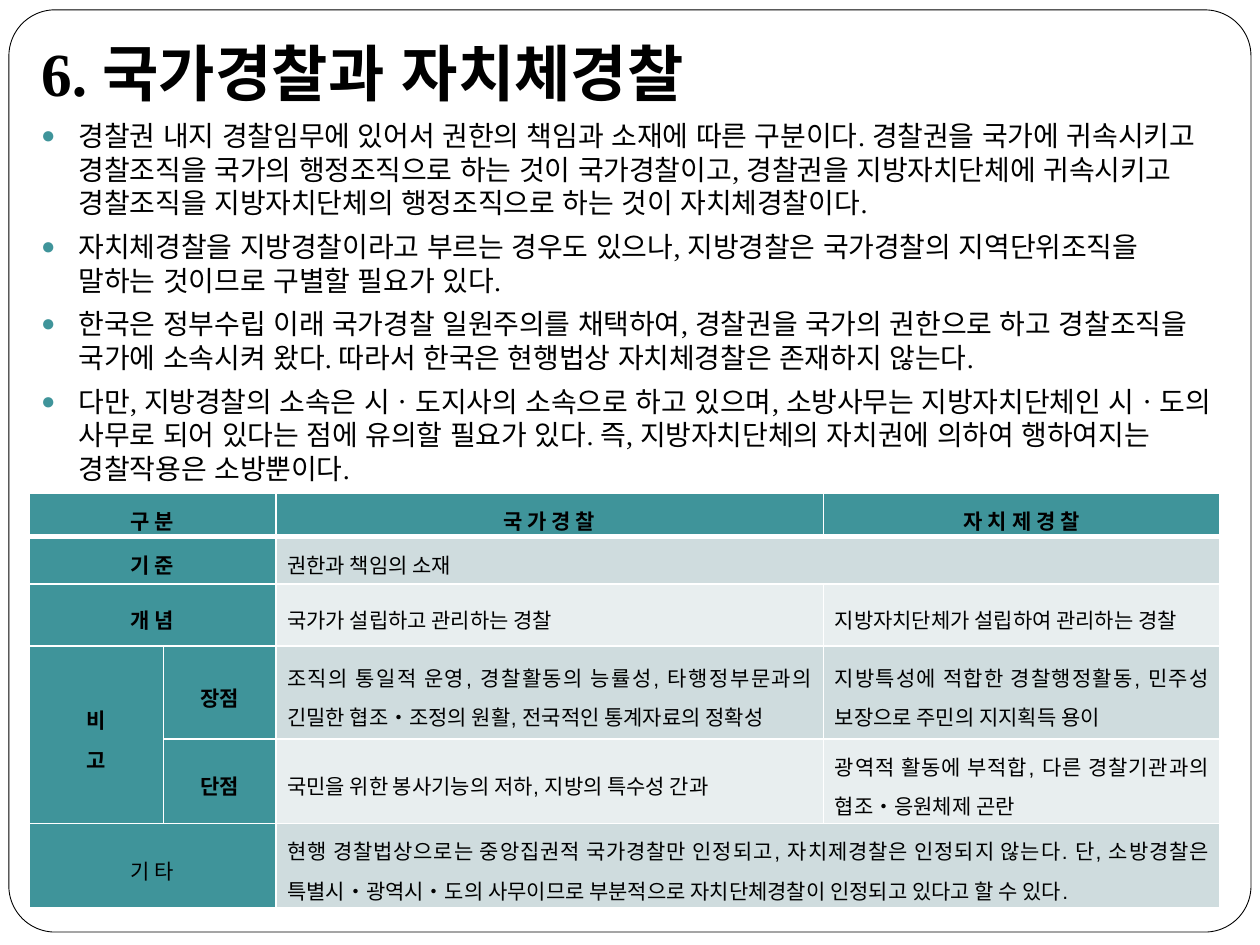
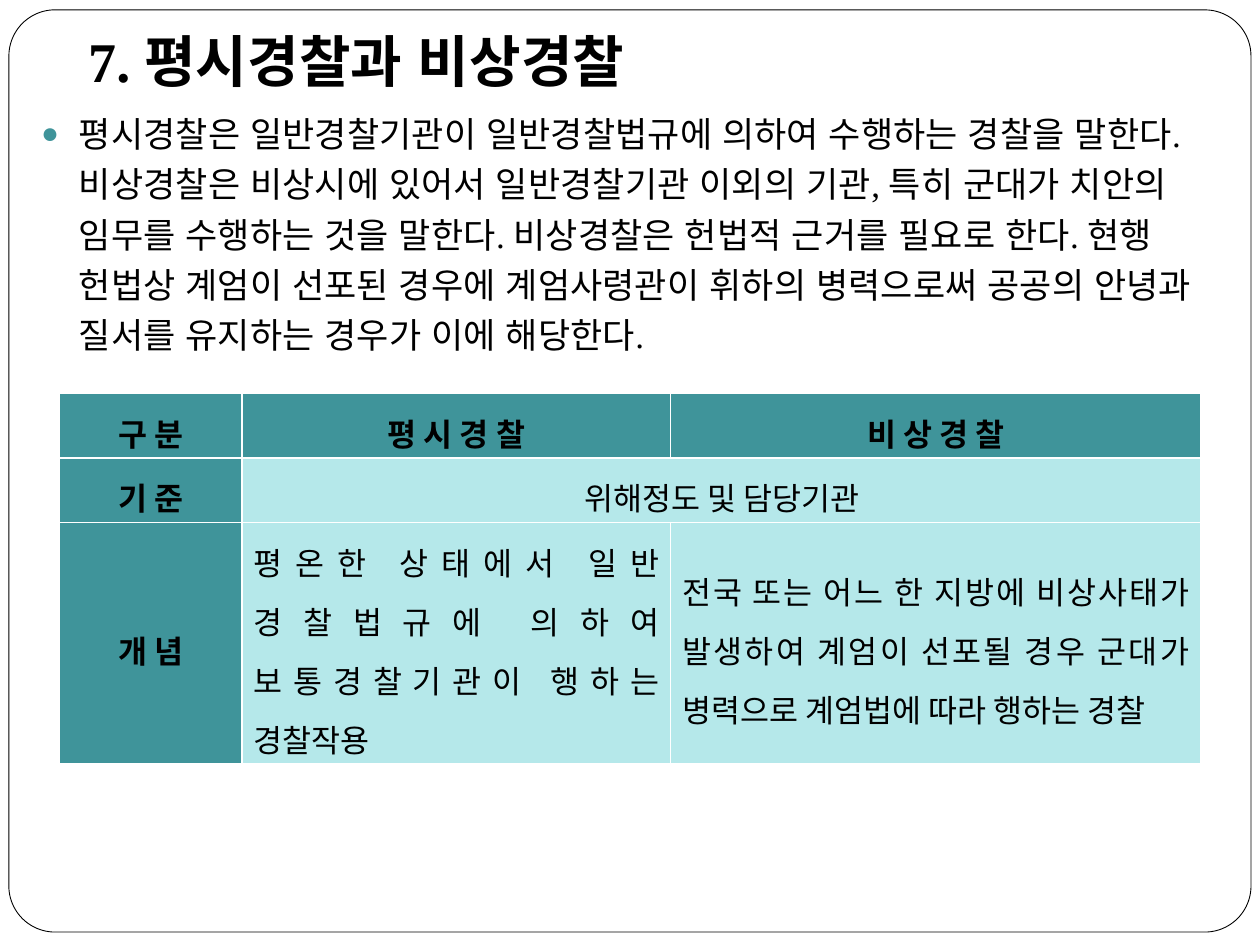
from lxml import etree
from pptx import Presentation
from pptx.dml.color import RGBColor
from pptx.enum.shapes import MSO_SHAPE
from pptx.enum.text import MSO_ANCHOR, PP_ALIGN
from pptx.oxml.ns import qn
from pptx.util import Cm, Pt

ROUNDED = MSO_SHAPE.ROUNDED_RECTANGLE
MIDDLE = MSO_ANCHOR.MIDDLE
CENTER, JUSTIFY = PP_ALIGN.CENTER, PP_ALIGN.JUSTIFY

BLACK, WHITE, TEAL = "000000", "FFFFFF", "3F949A"
GREY_BANDS = ["CFDCDE", "E8EEEF"]
AQUA_BANDS = ["B5E8EA"]
SERIF, SANS = "Times New Roman", "Arial"
HANGING = Cm(0.76)
CELL_INSET, CELL_INDENT = Cm(0.05), Cm(0.18)

# In the grids, "<" continues the cell to the left and "^" the cell above.
STATE_LOCAL_POINTS = [
    "경찰권 내지 경찰임무에 있어서 권한의 책임과 소재에 따른 구분이다. 경찰권을 국가에 귀속시키고 "
    "경찰조직을 국가의 행정조직으로 하는 것이 국가경찰이고, 경찰권을 지방자치단체에 귀속시키고 "
    "경찰조직을 지방자치단체의 행정조직으로 하는 것이 자치체경찰이다.",
    "자치체경찰을 지방경찰이라고 부르는 경우도 있으나, 지방경찰은 국가경찰의 지역단위조직을 "
    "말하는 것이므로 구별할 필요가 있다.",
    "한국은 정부수립 이래 국가경찰 일원주의를 채택하여, 경찰권을 국가의 권한으로 하고 경찰조직을 "
    "국가에 소속시켜 왔다. 따라서 한국은 현행법상 자치체경찰은 존재하지 않는다.",
    "다만, 지방경찰의 소속은 시ㆍ도지사의 소속으로 하고 있으며, 소방사무는 지방자치단체인 "
    "시ㆍ도의 사무로 되어 있다는 점에 유의할 필요가 있다. 즉, 지방자치단체의 자치권에 의하여 "
    "행하여지는 경찰작용은 소방뿐이다.",
]
STATE_LOCAL_GRID = [
    ["구 분", "<", "국 가 경 찰", "자 치 제 경 찰"],
    ["기 준", "<", "권한과 책임의 소재", "<"],
    ["개 념", "<", "국가가 설립하고 관리하는 경찰", "지방자치단체가 설립하여 관리하는 경찰"],
    ["비\n고", "장점",
     "조직의 통일적 운영, 경찰활동의 능률성, 타행정부문과의 긴밀한 협조‧조정의 원활, 전국적인 통계자료의 정확성",
     "지방특성에 적합한 경찰행정활동, 민주성 보장으로 주민의 지지획득 용이"],
    ["^", "단점", "국민을 위한 봉사기능의 저하, 지방의 특수성 간과",
     "광역적 활동에 부적합, 다른 경찰기관과의 협조‧응원체제 곤란"],
    ["기 타", "<",
     "현행 경찰법상으로는 중앙집권적 국가경찰만 인정되고, 자치제경찰은 인정되지 않는다. 단, 소방경찰은 "
     "특별시‧광역시‧도의 사무이므로 부분적으로 자치단체경찰이 인정되고 있다고 할 수 있다.", "<"],
]
PEACE_EMERGENCY_POINTS = [
    "평시경찰은 일반경찰기관이 일반경찰법규에 의하여 수행하는 경찰을 말한다. 비상경찰은 비상시에 "
    "있어서 일반경찰기관 이외의 기관, 특히 군대가 치안의 임무를 수행하는 것을 말한다. 비상경찰은 "
    "헌법적 근거를 필요로 한다. 현행 헌법상 계엄이 선포된 경우에 계엄사령관이 휘하의 병력으로써 "
    "공공의 안녕과 질서를 유지하는 경우가 이에 해당한다.",
]
PEACE_EMERGENCY_GRID = [
    ["구 분", "평 시 경 찰", "비 상 경 찰"],
    ["기 준", "위해정도 및 담당기관", "<"],
    ["개 념", "평온한 상태에서 일반 경찰법규에 의하여 보통경찰기관이 행하는 경찰작용",
     "전국 또는 어느 한 지방에 비상사태가 발생하여 계엄이 선포될 경우 군대가 병력으로 계엄법에 따라 행하는 경찰"],
]


def rgb(value):
    return RGBColor.from_string(value)


def add_element(parent, tag, **attributes):
    return etree.SubElement(parent, qn(tag), attributes)


def set_font(para, name, size, bold=False):
    font = para.font
    font.name, font.size, font.bold = name, Pt(size), bold
    font.color.rgb = rgb(BLACK)


def set_indent(para, left, first=0, right=0):
    properties = para._p.get_or_add_pPr()
    properties.set("marL", str(left))
    properties.set("marR", str(right))
    properties.set("indent", str(first))


def add_bullet(para):
    properties = para._p.get_or_add_pPr()
    add_element(add_element(properties, "a:buClr"), "a:srgbClr", val=TEAL)
    add_element(properties, "a:buSzPct", val="85000")
    add_element(properties, "a:buFont", typeface=SANS)
    add_element(properties, "a:buChar", char="●")


def add_page(deck):
    """Add a blank slide with the rounded frame."""
    page = deck.slides.add_slide(deck.slide_layouts[6])
    frame = page.shapes.add_shape(ROUNDED, Cm(0.18), Cm(0.2), Cm(25.04), Cm(18.59))
    frame.adjustments[0] = 0.05
    frame.shadow.inherit = False
    frame.fill.solid()
    frame.fill.fore_color.rgb = rgb(WHITE)
    frame.line.color.rgb = rgb(BLACK)
    frame.line.width = Pt(0.5)
    return page


def add_body(page, box, title, title_size, title_indent, points, size, spacing=1.0):
    """Write the heading and its bulleted points in one text box."""
    frame = page.shapes.add_textbox(*map(Cm, box)).text_frame
    frame.word_wrap = True
    for index, text in enumerate([title, *points]):
        para = frame.paragraphs[0] if index == 0 else frame.add_paragraph()
        para.text = text
        para.space_before = Pt(5.8)
        if index == 0:
            set_indent(para, Cm(title_indent))
            set_font(para, SERIF, title_size, True)
        else:
            para.line_spacing = spacing
            set_indent(para, HANGING, -HANGING)
            add_bullet(para)
            set_font(para, SERIF, size)
        east_asian = add_element(para.font._element, "a:ea", typeface=SANS)
        para.font._element.find(qn("a:latin")).addnext(east_asian)


def set_borders(cell, widths):
    properties = cell._tc.get_or_add_tcPr()
    for side in "LRTB":
        line = add_element(properties, f"a:ln{side}", w=str(Pt(widths.get(side, 1))))
        add_element(add_element(line, "a:solidFill"), "a:srgbClr", val=WHITE)


def span_end(grid, row, column):
    """Find the last row and column of the cell that starts here."""
    last_row, last_column = row, column
    while last_column + 1 < len(grid[row]) and grid[row][last_column + 1] == "<":
        last_column += 1
    while last_row + 1 < len(grid) and grid[last_row + 1][column] == "^":
        last_row += 1
    return last_row, last_column


def add_grid(page, corner, widths, heights, grid, size, bands, label_columns=1,
             plain_labels=(), centered_rows=(), rule_width=1):
    left, top = map(Cm, corner)
    table = page.shapes.add_table(len(heights), len(widths), left, top,
                                  Cm(sum(widths)), Cm(sum(heights))).table
    for column, width in zip(table.columns, widths):
        column.width = Cm(width)
    for row, height in zip(table.rows, heights):
        row.height = Cm(height)
    for row, texts in enumerate(grid):
        for column, text in enumerate(texts):
            cell = table.cell(row, column)
            is_label = row == 0 or column < label_columns
            set_borders(cell, {0: {"B": rule_width}, 1: {"T": rule_width}}.get(row, {}))
            cell.fill.solid()
            cell.fill.fore_color.rgb = rgb(TEAL if is_label else bands[(row - 1) % len(bands)])
            if text in ("<", "^"):
                continue
            end = span_end(grid, row, column)
            if end != (row, column):
                cell.merge(table.cell(*end))
            cell.vertical_anchor = MIDDLE
            cell.margin_left = cell.margin_right = CELL_INSET
            cell.margin_top = cell.margin_bottom = CELL_INSET
            cell.text = text
            for para in cell.text_frame.paragraphs:
                para.alignment = CENTER if is_label or row in centered_rows else JUSTIFY
                para.line_spacing = 1.3
                if row == 0 or column >= label_columns:
                    set_indent(para, CELL_INDENT, right=CELL_INDENT)
                set_font(para, SANS, size, is_label and text not in plain_labels)


def build_state_and_local(deck):
    page = add_page(deck)
    add_body(page, (0.58, 0.58, 24.21, 17.86), "6. 국가경찰과 자치체경찰", 35, 0,
             STATE_LOCAL_POINTS, 16)
    add_grid(page, (0.58, 9.94), (2.72, 2.26, 11.04, 8), (0.88, 0.95, 1.25, 1.88, 1.7, 1.7),
             STATE_LOCAL_GRID, 12, GREY_BANDS, label_columns=2,
             plain_labels=("기 타",), rule_width=3)


def build_peace_and_emergency(deck):
    page = add_page(deck)
    add_body(page, (0.58, 0.41, 24.21, 18.06), "7. 평시경찰과 비상경찰", 32, 0.95,
             PEACE_EMERGENCY_POINTS, 20, 1.2)
    add_grid(page, (1.2, 7.93), (3.68, 8.64, 10.69), (1.3, 1.3, 4.86),
             PEACE_EMERGENCY_GRID, 18, AQUA_BANDS, centered_rows=(1,))


def main():
    deck = Presentation()
    deck.slide_width, deck.slide_height = Cm(25.4), Cm(19.05)
    build_state_and_local(deck)
    build_peace_and_emergency(deck)
    deck.save("out.pptx")


if __name__ == "__main__":
    main()
